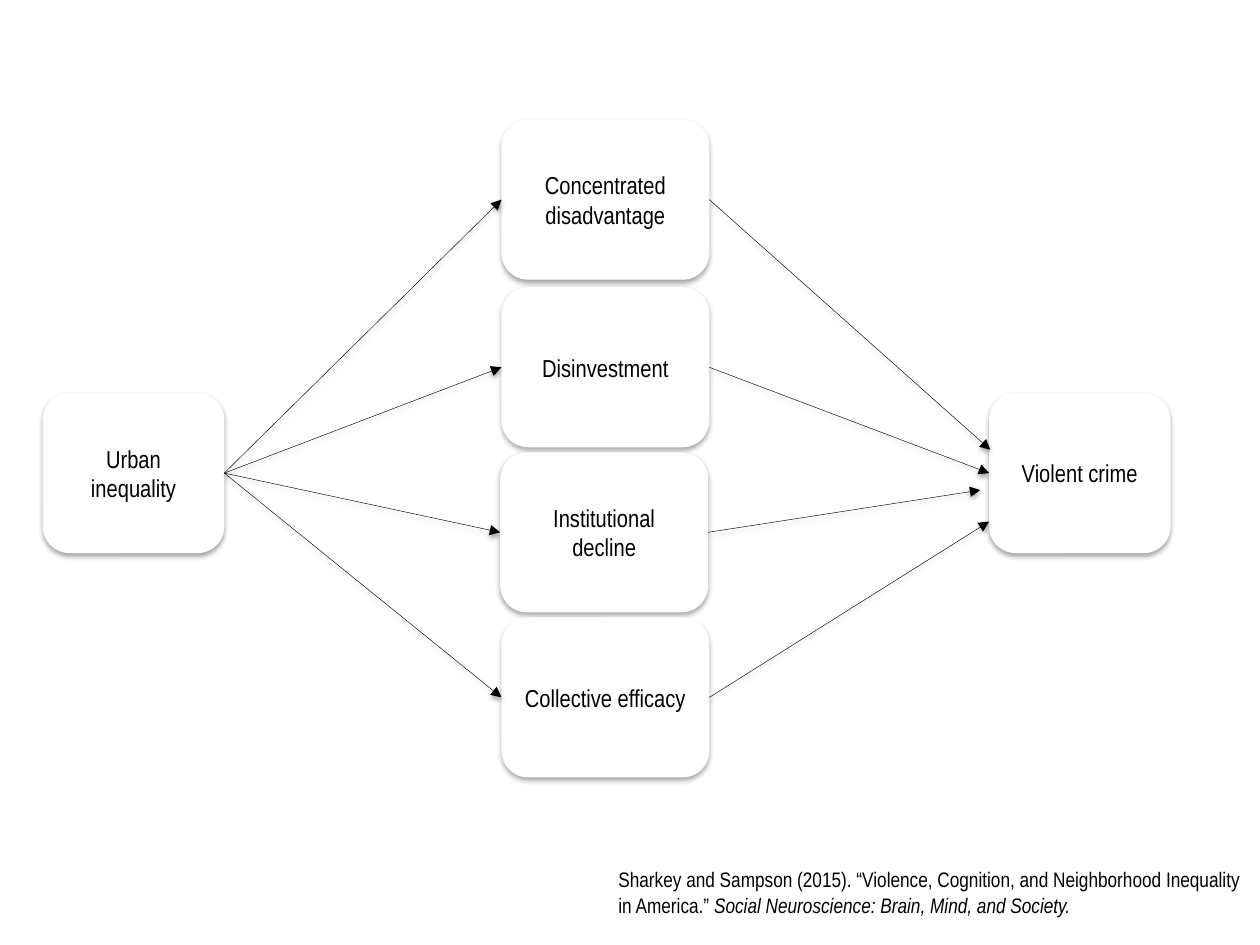
"""Build a slide linking urban inequality to violent crime through four neighborhood mechanisms."""
from dataclasses import dataclass

import lxml.etree
import pptx
import pptx.dml.color
import pptx.enum.shapes
import pptx.enum.text
import pptx.oxml.ns
import pptx.util

BLACK = pptx.dml.color.RGBColor(0, 0, 0)
WHITE = pptx.dml.color.RGBColor(255, 255, 255)
FONT = "Arial Narrow"
CELL = 0.1
COLUMNS, ROWS = 100, 75
BOX_HEIGHT = 12.7


@dataclass(frozen=True)
class Box:
    """A labelled box placed in grid columns and rows."""

    label: str
    left: float
    top: float
    width: float

    @property
    def right(self) -> float:
        """Give the column of the right edge."""
        return self.left + self.width

    @property
    def middle(self) -> float:
        """Give the row of the vertical centre."""
        return self.top + BOX_HEIGHT / 2


@dataclass(frozen=True)
class Path:
    """A mechanism and the point where its arrow meets the outcome."""

    mechanism: Box
    end_column: float
    end_row: float


CAUSE = Box("Urban inequality", 3.4, 31.2, 14.4)
OUTCOME = Box("Violent crime", 78.5, 31.2, 14.4)
PATHS = (
    Path(Box("Concentrated disadvantage", 39.8, 9.5, 16.5), 78.6, 35.7),
    Path(Box("Disinvestment", 39.8, 22.8, 16.5), OUTCOME.left, OUTCOME.middle),
    Path(Box("Institutional decline", 39.7, 35.9, 16.5), 77.8, 38.9),
    Path(Box("Collective efficacy", 39.8, 49, 16.5), OUTCOME.left, 41.4),
)


def grid(cells: float) -> int:
    """Turn grid cells into a slide length."""
    return pptx.util.Inches(cells * CELL)


def add_node(parent, tag: str, **attributes: str):
    """Add a drawing element below its parent."""
    return lxml.etree.SubElement(parent, pptx.oxml.ns.qn(tag), attributes)


def add_shadow(properties, distance: float, opacity: int) -> None:
    """Give a shape or connector a soft shadow straight below it."""
    effects = add_node(properties, "a:effectLst")
    shadow = add_node(
        effects,
        "a:outerShdw",
        blurRad=str(pptx.util.Pt(3.1)),
        dist=str(pptx.util.Pt(distance)),
        dir="5400000",
        rotWithShape="0",
    )
    color = add_node(shadow, "a:srgbClr", val=str(BLACK))
    add_node(color, "a:alpha", val=str(opacity * 1000))


def style_paragraph(para, size: int) -> None:
    """Set the common font of a paragraph."""
    para.font.name = FONT
    para.font.size = pptx.util.Pt(size)
    para.font.color.rgb = BLACK


def draw_box(page, box: Box) -> None:
    """Draw a rounded white box with its label."""
    shape = page.shapes.add_shape(
        pptx.enum.shapes.MSO_SHAPE.FLOWCHART_ALTERNATE_PROCESS,
        grid(box.left), grid(box.top), grid(box.width), grid(BOX_HEIGHT),
    )
    shape.fill.solid()
    shape.fill.fore_color.rgb = WHITE
    shape.line.fill.background()
    add_shadow(shape.element.spPr, 1.8, 35)
    frame = shape.text_frame
    frame.word_wrap = True
    frame.vertical_anchor = pptx.enum.text.MSO_ANCHOR.MIDDLE
    para = frame.paragraphs[0]
    para.text = box.label
    para.alignment = pptx.enum.text.PP_ALIGN.CENTER
    style_paragraph(para, 14)


def draw_arrow(page, left: float, top: float, right: float, bottom: float) -> None:
    """Draw a thin arrow between two grid points."""
    arrow = page.shapes.add_connector(
        pptx.enum.shapes.MSO_CONNECTOR.STRAIGHT,
        grid(left), grid(top), grid(right), grid(bottom),
    )
    arrow.line.color.rgb = BLACK
    arrow.line.width = pptx.util.Pt(0.25)
    add_node(arrow.line._get_or_add_ln(), "a:tailEnd", type="triangle")
    add_shadow(arrow._element.spPr, 1.6, 38)


def draw_citation(page) -> None:
    """Write the reference at the lower right."""
    box = page.shapes.add_textbox(grid(48.1), grid(68.3), grid(51.7), grid(5))
    frame = box.text_frame
    frame.word_wrap = True
    frame.vertical_anchor = pptx.enum.text.MSO_ANCHOR.MIDDLE
    para = frame.paragraphs[0]
    style_paragraph(para, 12)
    para.add_run().text = (
        "Sharkey and Sampson (2015). “Violence, Cognition, and "
        "Neighborhood Inequality in America.” "
    )
    span = para.add_run()
    span.text = "Social Neuroscience: Brain, Mind, and Society."
    span.font.italic = True


def main() -> None:
    """Build and save the deck."""
    deck = pptx.Presentation()
    deck.slide_width, deck.slide_height = grid(COLUMNS), grid(ROWS)
    page = deck.slides.add_slide(deck.slide_layouts[6])
    for box in (OUTCOME, CAUSE, *(path.mechanism for path in PATHS)):
        draw_box(page, box)
    for path in PATHS:
        box = path.mechanism
        draw_arrow(page, box.right, box.middle, path.end_column, path.end_row)
        draw_arrow(page, CAUSE.right, CAUSE.middle, box.left, box.middle)
    draw_citation(page)
    deck.save("out.pptx")


if __name__ == "__main__":
    main()
